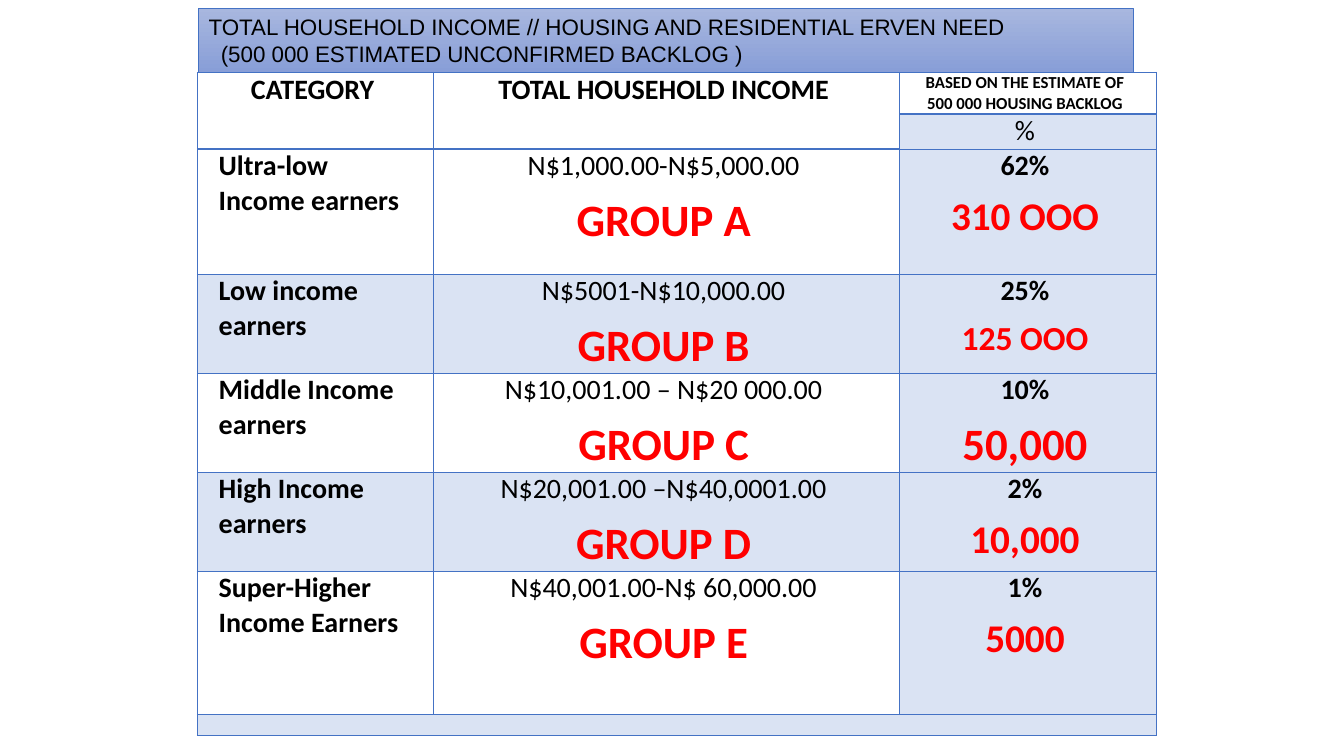
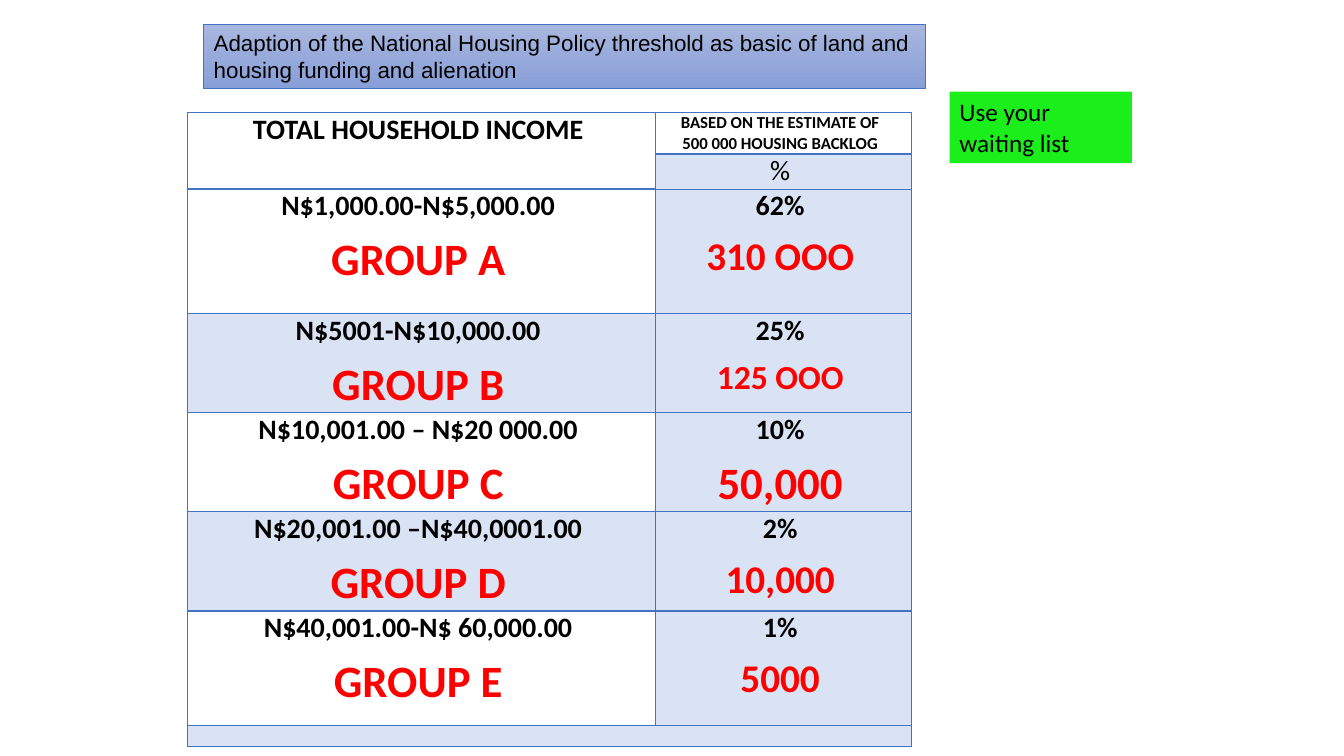
import dataclasses

import lxml.etree
import pptx
import pptx.dml.color
import pptx.enum.text
import pptx.oxml.ns
import pptx.util

qn = pptx.oxml.ns.qn
CENTER = pptx.enum.text.PP_ALIGN.CENTER
LEFT = pptx.enum.text.PP_ALIGN.LEFT
TITLE_ONLY = 5


@dataclasses.dataclass(frozen=True)
class Theme:
    ink: str = "000000"
    accent: str = "FF0000"
    line: str = "4472C4"
    band: str = "DAE3F3"
    note: str = "1BEF1B"
    banner_top: str = "A8B7DF"
    banner_bottom: str = "889ED7"
    banner_font: str = "Arial"
    body_font: str = "Calibri"
    banner_size: int = 16
    note_size: int = 18
    cell_size: int = 20
    small_size: int = 12
    group_size: int = 32
    empty_size: int = 8
    thin: int = 1
    thick: int = 2


@dataclasses.dataclass(frozen=True)
class Box:
    left: float
    top: float
    width: float
    height: float

    def lengths(self):
        return [grid(value) for value in dataclasses.astuple(self)]


@dataclasses.dataclass(frozen=True)
class Bracket:
    category: str
    income: str
    group: str
    percent: str
    need: str
    need_size: int


THEME = Theme()
BRACKETS = [
    Bracket("Ultra-low Income earners", "N$1,000.00-N$5,000.00", "GROUP A", "62%", "310 OOO", 28),
    Bracket("Low income earners", "N$5001-N$10,000.00", "GROUP B", "25%", "125 OOO", 24),
    Bracket("Middle Income earners", "N$10,001.00 – N$20 000.00", "GROUP C", "10%", "50,000", 32),
    Bracket("High Income earners", "N$20,001.00 –N$40,0001.00", "GROUP D", "2%", "10,000", 28),
    Bracket("Super-Higher Income Earners", "N$40,001.00-N$ 60,000.00", "GROUP E", "1%", "5000", 28),
]


def grid(units):
    return pptx.util.Inches(units / 10)


def color(value):
    return pptx.dml.color.RGBColor.from_string(value)


def add_run(paragraph, text, size, font=THEME.body_font, ink=THEME.ink, bold=False):
    run = paragraph.add_run()
    run.text = text
    run.font.name = font
    run.font.size = pptx.util.Pt(size)
    run.font.bold = bold
    run.font.color.rgb = color(ink)


def add_banner(slide, box, lines):
    title = slide.shapes.title
    title.left, title.top, title.width, title.height = box.lengths()
    title.fill.gradient()
    title.fill.gradient_angle = 270
    stops = zip(title.fill.gradient_stops, (0, 1), (THEME.banner_top, THEME.banner_bottom))
    for stop, position, value in stops:
        stop.position = position
        stop.color.rgb = color(value)
    title.line.color.rgb = color(THEME.line)
    title.line.width = pptx.util.Pt(0.5)
    frame = title.text_frame
    frame.word_wrap = True
    frame.auto_size = pptx.enum.text.MSO_AUTO_SIZE.NONE
    frame.vertical_anchor = pptx.enum.text.MSO_ANCHOR.MIDDLE
    for index, (text, indent) in enumerate(lines):
        paragraph = frame.add_paragraph() if index else frame.paragraphs[0]
        paragraph.alignment = LEFT
        paragraph._p.get_or_add_pPr().set("marL", str(grid(indent)))
        add_run(paragraph, text, THEME.banner_size, THEME.banner_font)


def add_note(slide, box, text):
    note = slide.shapes.add_textbox(*box.lengths())
    note.fill.solid()
    note.fill.fore_color.rgb = color(THEME.note)
    note.text_frame.word_wrap = True
    add_run(note.text_frame.paragraphs[0], text, THEME.note_size)


def write_cell(cell, lines, alignment=CENTER):
    frame = cell.text_frame
    for index, (text, size, ink, bold) in enumerate(lines):
        paragraph = frame.add_paragraph() if index else frame.paragraphs[0]
        paragraph.alignment = alignment
        paragraph.space_before = pptx.util.Pt(7.1)
        paragraph._p.get_or_add_pPr().set("marL", str(grid(1.8)))
        add_run(paragraph, text, size, ink=ink, bold=bold)


def add_border(cell, side, width):
    properties = cell._tc.get_or_add_tcPr()
    line = lxml.etree.SubElement(properties, qn(f"a:{side}"), w=str(pptx.util.Pt(width)))
    fill = lxml.etree.SubElement(line, qn("a:solidFill"))
    lxml.etree.SubElement(fill, qn("a:srgbClr"), val=THEME.line)


def style_cell(cell, row, column, last_row, last_column):
    def edge_below(index):
        header_end = 0 if column == last_column else 1
        return THEME.thick if index == header_end else THEME.thin

    cell.margin_left = grid(0.3)
    cell.margin_right = grid(2.7)
    cell.margin_top = cell.margin_bottom = 0
    add_border(cell, "lnL", THEME.thin)
    add_border(cell, "lnR", THEME.thin)
    add_border(cell, "lnT", edge_below(row - 1))
    add_border(cell, "lnB", edge_below(row))
    if row in (3, 5, last_row) or (column == last_column and row > 0):
        cell.fill.solid()
        cell.fill.fore_color.rgb = color(THEME.band)
    else:
        cell.fill.background()
    if not cell.text:
        paragraph = cell.text_frame.paragraphs[0]._p
        size = str(THEME.empty_size * 100)
        lxml.etree.SubElement(paragraph, qn("a:endParaRPr"), sz=size)


def share_out(parts, weights, total, attribute):
    for part, weight in zip(parts, weights):
        setattr(part, attribute, grid(total * weight / sum(weights)))


def add_income_table(slide, box, columns, rows, with_category):
    last_row, last_column = len(rows) - 1, len(columns) - 1
    table = slide.shapes.add_table(len(rows), len(columns), *box.lengths()).table
    table.first_row = table.horz_banding = False
    share_out(table.columns, columns, box.width, "width")
    share_out(table.rows, rows, box.height, "height")

    headings = ["CATEGORY"] * with_category + ["TOTAL HOUSEHOLD INCOME"]
    for column, heading in enumerate(headings):
        table.cell(0, column).merge(table.cell(1, column))
        write_cell(table.cell(0, column), [(heading, THEME.cell_size, THEME.ink, True)])
    estimate = "BASED ON THE ESTIMATE OF 500 000 HOUSING BACKLOG"
    write_cell(table.cell(0, last_column), [(estimate, THEME.small_size, THEME.ink, True)])
    write_cell(table.cell(1, last_column), [("%", THEME.cell_size, THEME.ink, False)])

    for row, bracket in enumerate(BRACKETS, start=2):
        if with_category:
            category = (bracket.category, THEME.cell_size, THEME.ink, True)
            write_cell(table.cell(row, 0), [category], LEFT)
        write_cell(table.cell(row, last_column - 1), [
            (bracket.income, THEME.cell_size, THEME.ink, not with_category),
            (bracket.group, THEME.group_size, THEME.accent, True),
        ])
        write_cell(table.cell(row, last_column), [
            (bracket.percent, THEME.cell_size, THEME.ink, True),
            (bracket.need, bracket.need_size, THEME.accent, True),
        ])
    table.cell(last_row, 0).merge(table.cell(last_row, last_column))

    for row in range(len(rows)):
        for column in range(len(columns)):
            style_cell(table.cell(row, column), row, column, last_row, last_column)


def add_need_slide(presentation):
    slide = presentation.slides.add_slide(presentation.slide_layouts[TITLE_ONLY])
    add_banner(slide, Box(19.7, 0.8, 92.7, 6.4), [
        ("TOTAL HOUSEHOLD INCOME // HOUSING AND RESIDENTIAL ERVEN NEED", 0),
        ("(500 000 ESTIMATED UNCONFIRMED BACKLOG )", 1.2),
    ])
    rows = [4.1, 3.5, 12.4, 9.8, 9.8, 9.8, 14.2, 2.1]
    add_income_table(slide, Box(19.6, 7.2, 95.1, 65.7), [23.4, 46.2, 25.4], rows, True)


def add_policy_slide(presentation):
    slide = presentation.slides.add_slide(presentation.slide_layouts[TITLE_ONLY])
    add_banner(slide, Box(20.2, 2.4, 71.6, 6.4), [
        ("Adaption of the National Housing Policy threshold as basic of land and "
         "housing funding and alienation", 0),
    ])
    rows = [4, 3.5, 12.4, 9.7, 9.7, 9.7, 11.4, 2.1]
    add_income_table(slide, Box(18.6, 11.2, 71.8, 62.4), [46.4, 25.4], rows, False)
    add_note(slide, Box(94.2, 9.1, 18.1, 7.1), "Use your waiting list")


def main():
    presentation = pptx.Presentation()
    presentation.slide_width = grid(133.33)
    presentation.slide_height = grid(75)
    add_need_slide(presentation)
    add_policy_slide(presentation)
    presentation.save("out.pptx")


if __name__ == "__main__":
    main()
